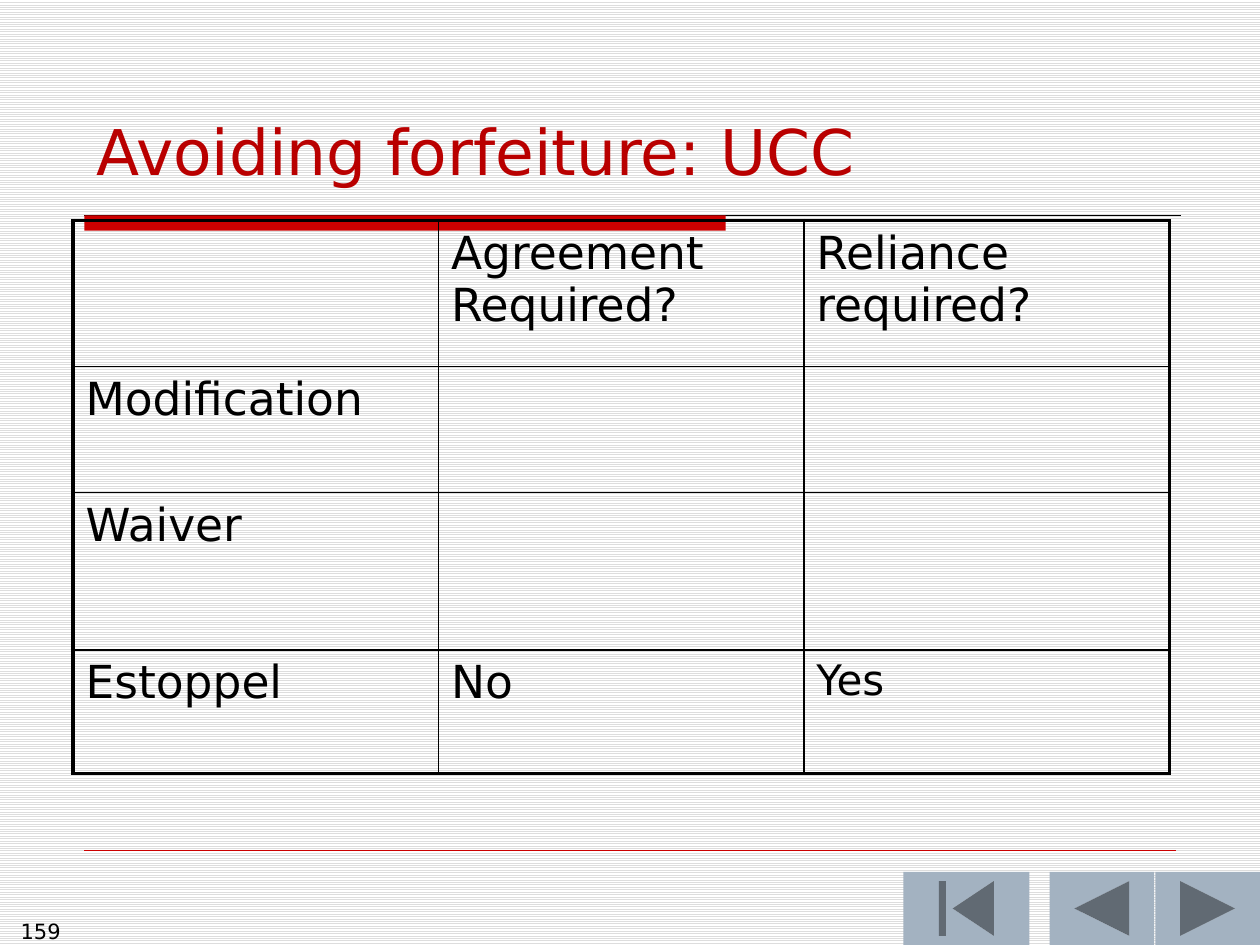
"""Build the slide comparing ways of avoiding forfeiture under the UCC."""
from lxml.etree import SubElement
from pptx import Presentation
from pptx.dml.color import RGBColor
from pptx.enum.dml import MSO_PATTERN
from pptx.enum.shapes import MSO_CONNECTOR, MSO_SHAPE
from pptx.enum.text import MSO_ANCHOR, PP_ALIGN
from pptx.oxml import parse_xml
from pptx.oxml.ns import nsdecls, qn
from pptx.util import Inches, Pt


def color(value):
    return RGBColor.from_string(value)


def set_text(frame, text, size, font_color="000000"):
    frame.text = text
    frame.word_wrap = True
    paragraph = frame.paragraphs[0]
    paragraph.font.name = "DejaVu Sans"
    paragraph.font.size = Pt(size)
    paragraph.font.color.rgb = color(font_color)
    return paragraph


presentation = Presentation()
presentation.slide_width = Inches(10)
presentation.slide_height = Inches(7.5)
slide = presentation.slides.add_slide(presentation.slide_layouts[6])

background = slide.background.fill
background.patterned()
background.pattern = MSO_PATTERN.LIGHT_HORIZONTAL
background.fore_color.rgb = color("DDDDDD")
background.back_color.rgb = color("FFFFFF")

for right, top, line_color, width in [
    (9.37, 1.71, "000000", 0.75),
    (9.33, 6.75, "CC0000", 0.25),
]:
    rule = slide.shapes.add_connector(
        MSO_CONNECTOR.STRAIGHT, Inches(0.67), Inches(top), Inches(right), Inches(top)
    )
    rule.line.color.rgb = color(line_color)
    rule.line.width = Pt(width)
    SubElement(rule.element.spPr, qn("a:effectLst"))

for kind, left, top, width, height, fill_color in [
    (MSO_SHAPE.RECTANGLE, 0.67, 1.71, 5.09, 0.12, "CC0000"),
    (MSO_SHAPE.ACTION_BUTTON_BACK_OR_PREVIOUS, 8.33, 6.92, 0.83, 0.58, "A3B2C1"),
    (MSO_SHAPE.ACTION_BUTTON_BEGINNING, 7.17, 6.92, 1, 0.58, "A3B2C1"),
    (MSO_SHAPE.ACTION_BUTTON_FORWARD_OR_NEXT, 9.17, 6.92, 0.83, 0.58, "A3B2C1"),
]:
    shape = slide.shapes.add_shape(
        kind, Inches(left), Inches(top), Inches(width), Inches(height)
    )
    shape.shadow.inherit = False
    shape.fill.solid()
    shape.fill.fore_color.rgb = color(fill_color)
    shape.line.fill.background()

number = slide.shapes.add_textbox(Inches(0), Inches(7.24), Inches(0.58), Inches(0.26))
set_text(number.text_frame, "159", 12).alignment = PP_ALIGN.RIGHT

rows = [
    ["", "Agreement Required?", "Reliance required?"],
    ["Modification", "", ""],
    ["Waiver", "", ""],
    ["Estoppel", "No", "Yes"],
]
row_heights = [1.16, 1, 1.25, 0.98]
table = slide.shapes.add_table(
    4, 3, Inches(0.58), Inches(1.75), Inches(8.71), Inches(sum(row_heights))
).table
table.first_row = False
table.horz_banding = False
for column in table.columns:
    column.width = Inches(2.9)
for row_index, texts in enumerate(rows):
    table.rows[row_index].height = Inches(row_heights[row_index])
    for column_index, text in enumerate(texts):
        cell = table.cell(row_index, column_index)
        cell.fill.background()
        set_text(cell.text_frame, text, 24 if text == "Yes" else 26)
        outer_edges = {
            "L": column_index == 0,
            "R": column_index == 2,
            "T": row_index == 0,
            "B": row_index == 3,
        }
        properties = cell._tc.get_or_add_tcPr()
        for position, (side, outer) in enumerate(outer_edges.items()):
            border = parse_xml(
                f'<a:ln{side} {nsdecls("a")} w="{Pt(2.25 if outer else 1)}">'
                '<a:solidFill><a:srgbClr val="000000"/></a:solidFill>'
                f"</a:ln{side}>"
            )
            properties.insert(position, border)

title = slide.shapes.add_textbox(Inches(0.67), Inches(0.83), Inches(8.08), Inches(0.71))
set_text(title.text_frame, "Avoiding forfeiture: UCC", 36, "B90000")
title.text_frame.vertical_anchor = MSO_ANCHOR.BOTTOM

presentation.save("out.pptx")
